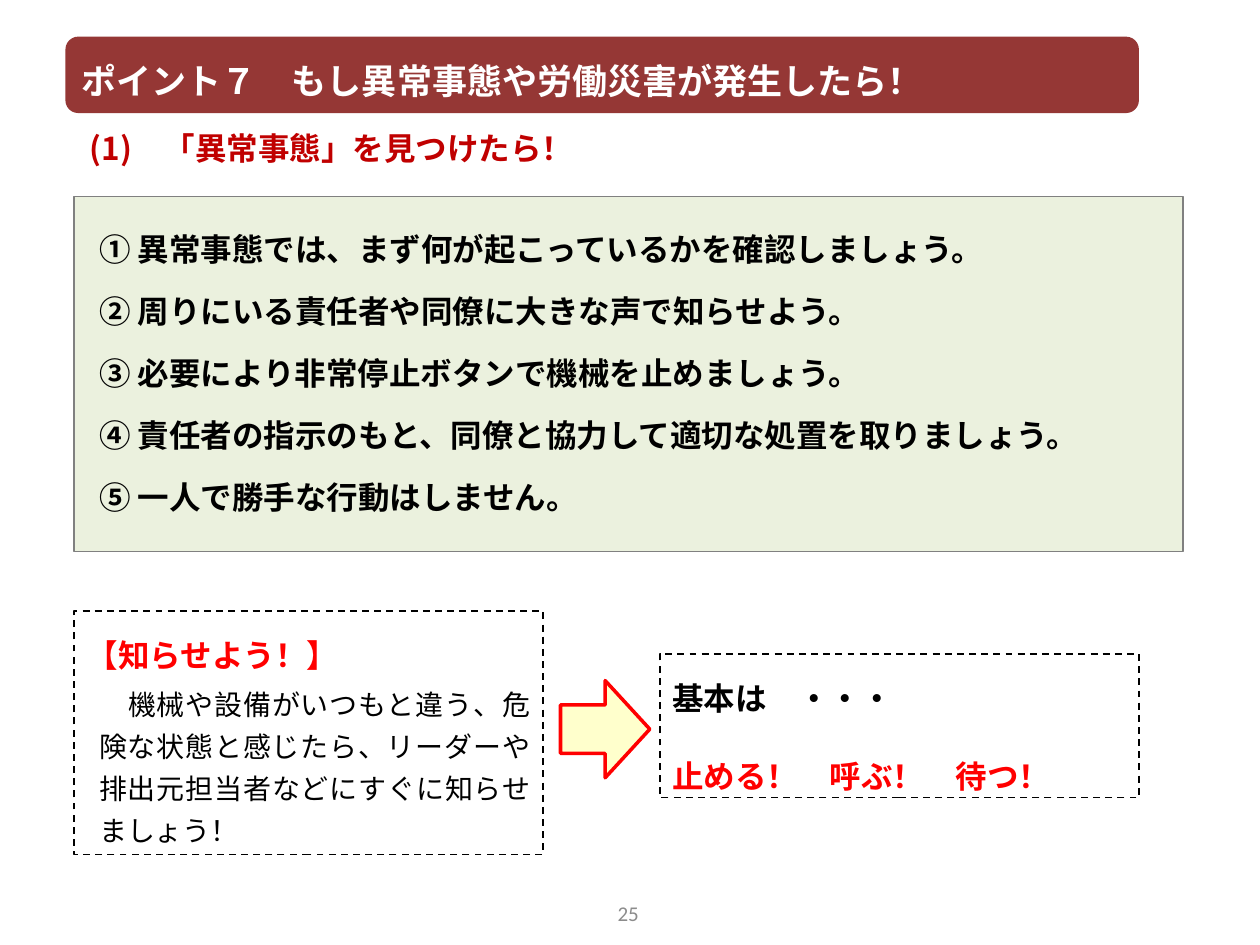
from lxml import etree
from pptx import Presentation
from pptx.dml.color import RGBColor
from pptx.enum.dml import MSO_LINE
from pptx.enum.shapes import MSO_SHAPE
from pptx.enum.text import MSO_ANCHOR, MSO_AUTO_SIZE, PP_ALIGN
from pptx.oxml.ns import qn
from pptx.util import Cm, Pt

RECT, ROUND, ARROW = MSO_SHAPE.RECTANGLE, MSO_SHAPE.ROUNDED_RECTANGLE, MSO_SHAPE.RIGHT_ARROW
TOP, MIDDLE = MSO_ANCHOR.TOP, MSO_ANCHOR.MIDDLE
LEFT, CENTER, JUSTIFY = PP_ALIGN.LEFT, PP_ALIGN.CENTER, PP_ALIGN.JUSTIFY
FIT, FIXED = MSO_AUTO_SIZE.SHAPE_TO_FIT_TEXT, MSO_AUTO_SIZE.NONE
DASH = MSO_LINE.DASH

JP, LATIN = "Noto Sans CJK JP", "Calibri"
COLORS = {
    "banner": "953735", "panel": "EBF1DE", "border": "808080", "heading": "C00000",
    "alert": "FF0000", "arrow": "FFFFCC", "text": "000000", "white": "FFFFFF", "page": "8C8C8C",
}
STEPS = [
    "① 異常事態では、まず何が起こっているかを確認しましょう。",
    "② 周りにいる責任者や同僚に大きな声で知らせよう。",
    "③ 必要により非常停止ボタンで機械を止めましょう。",
    "④ 責任者の指示のもと、同僚と協力して適切な処置を取りましょう。",
    "⑤ 一人で勝手な行動はしません。",
]
REPORT = "　機械や設備がいつもと違う、危険な状態と感じたら、リーダーや排出元担当者などにすぐに知らせましょう！"


def rgb(name):
    """Return the named colour."""
    return RGBColor.from_string(COLORS[name])


def add_box(s, kind, box, fill=None, line=None, width=1, dash=None):
    """Add a preset shape without shadow."""
    sp = s.shapes.add_shape(kind, *map(Cm, box))
    sp.shadow.inherit = False
    if fill:
        sp.fill.solid()
        sp.fill.fore_color.rgb = rgb(fill)
    else:
        sp.fill.background()
    if line:
        sp.line.color.rgb = rgb(line)
        sp.line.width = Pt(width)
        sp.line.dash_style = dash
    else:
        sp.line.fill.background()
    return sp


def set_frame(sp, anchor=TOP, fit=FIXED):
    """Set wrapping, anchor and autofit, and return the text frame."""
    tf = sp.text_frame
    tf.word_wrap = True
    tf.vertical_anchor = anchor
    tf.auto_size = fit
    return tf


def add_text(tf, text, size=18, color="text", bold=True, align=JUSTIFY,
             spacing=None, before=0, indent=0, font=JP):
    """Write a paragraph, using the first one while it is empty."""
    p = tf.paragraphs[0] if not tf.text else tf.add_paragraph()
    p.add_run().text = text
    p.alignment = align
    p.line_spacing = spacing
    p.space_before = Pt(before)
    p.font.size = Pt(size)
    p.font.bold = bold
    p.font.color.rgb = rgb(color)
    p.font.name = font
    pPr = p._p.get_or_add_pPr()
    pPr.set("marL", str(Cm(indent)))
    ea = etree.Element(qn("a:ea"), typeface=font)
    pPr.find(qn("a:defRPr")).find(qn("a:latin")).addnext(ea)


def add_label(s, box, text, anchor=TOP, fit=FIXED, **style):
    """Add a text box with one paragraph."""
    sp = s.shapes.add_textbox(*map(Cm, box))
    add_text(set_frame(sp, anchor, fit), text, **style)


def add_steps(s):
    """Add the panel of numbered steps."""
    sp = add_box(s, RECT, (1.5, 3.96, 22.35, 7.16), "panel", "border")
    tf = set_frame(sp)
    tf.margin_left, tf.margin_top, tf.margin_right = Cm(0.25), Cm(0.3), Cm(0.2)
    for step in STEPS:
        add_text(tf, step, spacing=1.5, before=3, indent=0.25)


def add_dashed_frame(s, box):
    """Add a dashed box and return its text frame."""
    return set_frame(add_box(s, RECT, box, line="text", dash=DASH), fit=FIT)


def main():
    """Build the slide and save it."""
    prs = Presentation()
    prs.slide_width, prs.slide_height = Cm(25.4), Cm(19.05)
    s = prs.slides.add_slide(prs.slide_layouts[6])

    add_steps(s)
    banner = add_box(s, ROUND, (1.32, 0.74, 21.64, 1.54), "banner")
    add_text(set_frame(banner, MIDDLE), "ポイント７　もし異常事態や労働災害が発生したら！",
             size=20, color="white", spacing=1.25)
    add_label(s, (1.56, 2.48, 12.75, 1.03), "(1)　「異常事態」を見つけたら！",
              fit=FIT, color="heading", align=LEFT)

    tf = add_dashed_frame(s, (1.5, 12.32, 9.45, 4.91))
    add_text(tf, "【知らせよう！】", color="alert", spacing=1.5, before=12)
    add_text(tf, REPORT, size=16, bold=False, spacing=1.25, before=3, indent=0.25)

    tf = add_dashed_frame(s, (13.3, 13.18, 9.66, 2.9))
    add_text(tf, "基本は　・・・", spacing=1.5, before=12)
    add_text(tf, "止める！　呼ぶ！　待つ！", color="alert", spacing=1.5, before=12)

    add_box(s, ARROW, (11.3, 13.72, 1.8, 1.96), "arrow", "alert", width=2)
    add_label(s, (9.7, 17.9, 5.93, 1.01), "25", anchor=MIDDLE, size=12,
              color="page", bold=False, align=CENTER, font=LATIN)
    prs.save("out.pptx")


if __name__ == "__main__":
    main()
